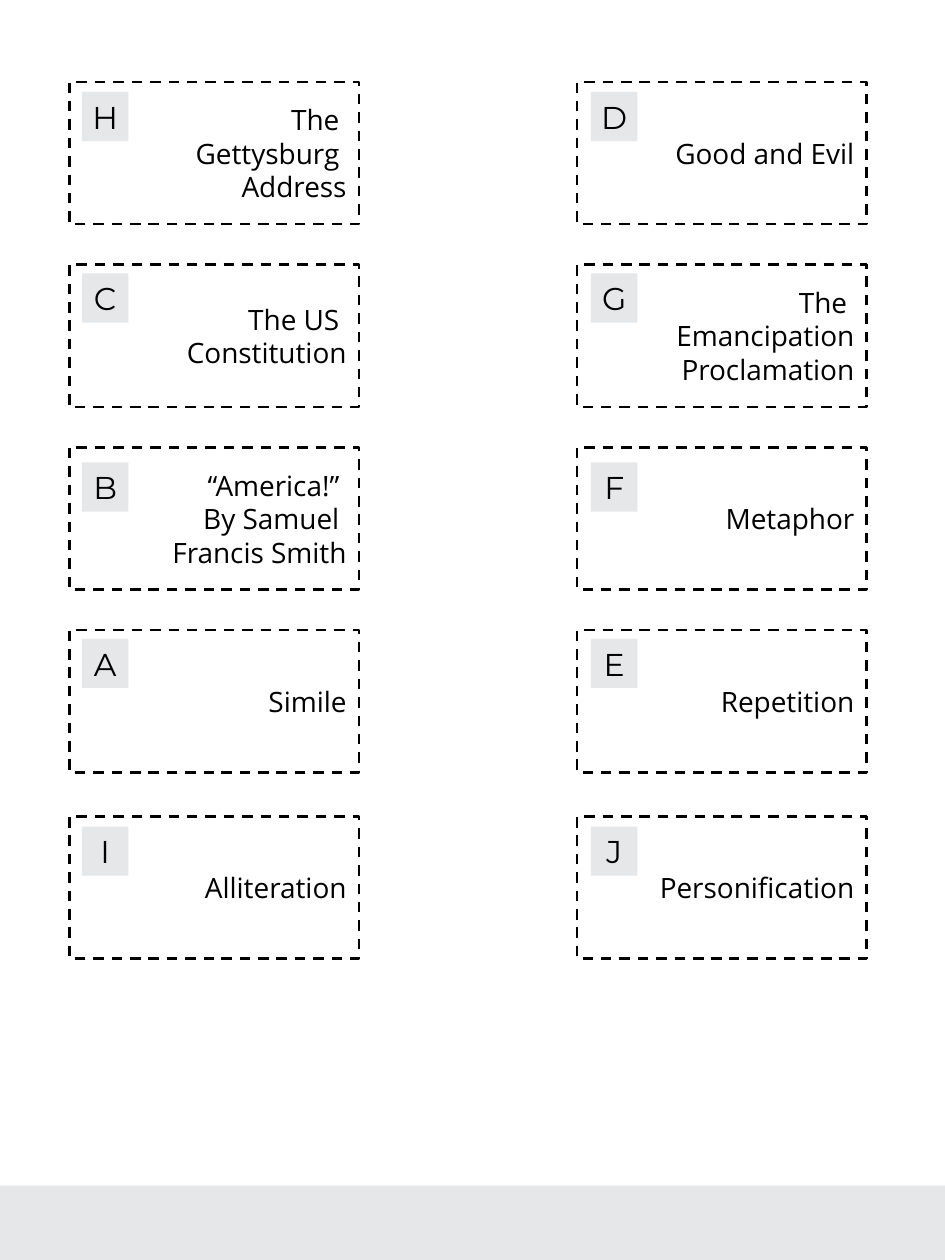
from dataclasses import dataclass

from pptx import Presentation
from pptx.dml.color import RGBColor
from pptx.enum.dml import MSO_LINE
from pptx.enum.shapes import MSO_SHAPE
from pptx.enum.text import MSO_ANCHOR, PP_ALIGN
from pptx.util import Inches, Pt

RECTANGLE = MSO_SHAPE.RECTANGLE
DASH = MSO_LINE.DASH
MIDDLE = MSO_ANCHOR.MIDDLE
CENTER, RIGHT = PP_ALIGN.CENTER, PP_ALIGN.RIGHT


@dataclass(frozen=True)
class Theme:
    ink: RGBColor = RGBColor(0x00, 0x00, 0x00)
    gray: RGBColor = RGBColor(0xE6, 0xE7, 0xE8)
    answer_font: str = "Open Sans"
    answer_size: Pt = Pt(16)
    letter_font: str = "Montserrat"
    letter_size: Pt = Pt(18)
    border: Pt = Pt(1.5)


theme = Theme()

SLIDE_WIDTH, SLIDE_HEIGHT = 7.5, 10
FOOTER_HEIGHT = 0.59
CARD_WIDTH, CARD_HEIGHT = 2.3, 1.13
BADGE_WIDTH, BADGE_HEIGHT = 0.37, 0.39
COLUMN_LEFTS = [0.55, 4.58]
BADGE_INDENTS = [0.1, 0.11]
ROW_TOPS = [0.65, 2.1, 3.55, 5, 6.48]
BADGE_DROPS = [0.08, 0.07, 0.12, 0.07, 0.08]

CARDS = [
    [("H", ["The ", "Gettysburg ", "Address"]), ("D", ["Good and Evil"])],
    [("C", ["The US ", "Constitution"]), ("G", ["The ", "Emancipation Proclamation"])],
    [("B", ["“America!” ", "By Samuel ", "Francis Smith"]), ("F", ["Metaphor"])],
    [("A", ["Simile"]), ("E", ["Repetition"])],
    [("I", ["Alliteration"]), ("J", ["Personification"])],
]


def add_box(left, top, width, height, filled):
    shape = slide.shapes.add_shape(
        RECTANGLE, Inches(left), Inches(top), Inches(width), Inches(height)
    )
    shape.shadow.inherit = False
    if filled:
        shape.fill.solid()
        shape.fill.fore_color.rgb = theme.gray
        shape.line.fill.background()
    else:
        shape.fill.background()
        shape.line.color.rgb = theme.ink
        shape.line.width = theme.border
        shape.line.dash_style = DASH
    return shape


def write(shape, lines, font_name, font_size, alignment):
    frame = shape.text_frame
    frame.word_wrap = True
    frame.vertical_anchor = MIDDLE
    frame.text = "\n".join(lines)
    for paragraph in frame.paragraphs:
        paragraph.alignment = alignment
        paragraph.font.name = font_name
        paragraph.font.size = font_size
        paragraph.font.color.rgb = theme.ink


presentation = Presentation()
presentation.slide_width = Inches(SLIDE_WIDTH)
presentation.slide_height = Inches(SLIDE_HEIGHT)
slide = presentation.slides.add_slide(presentation.slide_layouts[6])

add_box(0, SLIDE_HEIGHT - FOOTER_HEIGHT, SLIDE_WIDTH, FOOTER_HEIGHT, filled=True)

for top, drop, row in zip(ROW_TOPS, BADGE_DROPS, CARDS):
    for left, indent, (letter, answer) in zip(COLUMN_LEFTS, BADGE_INDENTS, row):
        card = add_box(left, top, CARD_WIDTH, CARD_HEIGHT, filled=False)
        write(card, answer, theme.answer_font, theme.answer_size, RIGHT)

        badge = add_box(left + indent, top + drop, BADGE_WIDTH, BADGE_HEIGHT, filled=True)
        badge.text_frame.margin_left = badge.text_frame.margin_right = 0
        write(badge, [letter], theme.letter_font, theme.letter_size, CENTER)

presentation.save("out.pptx")
